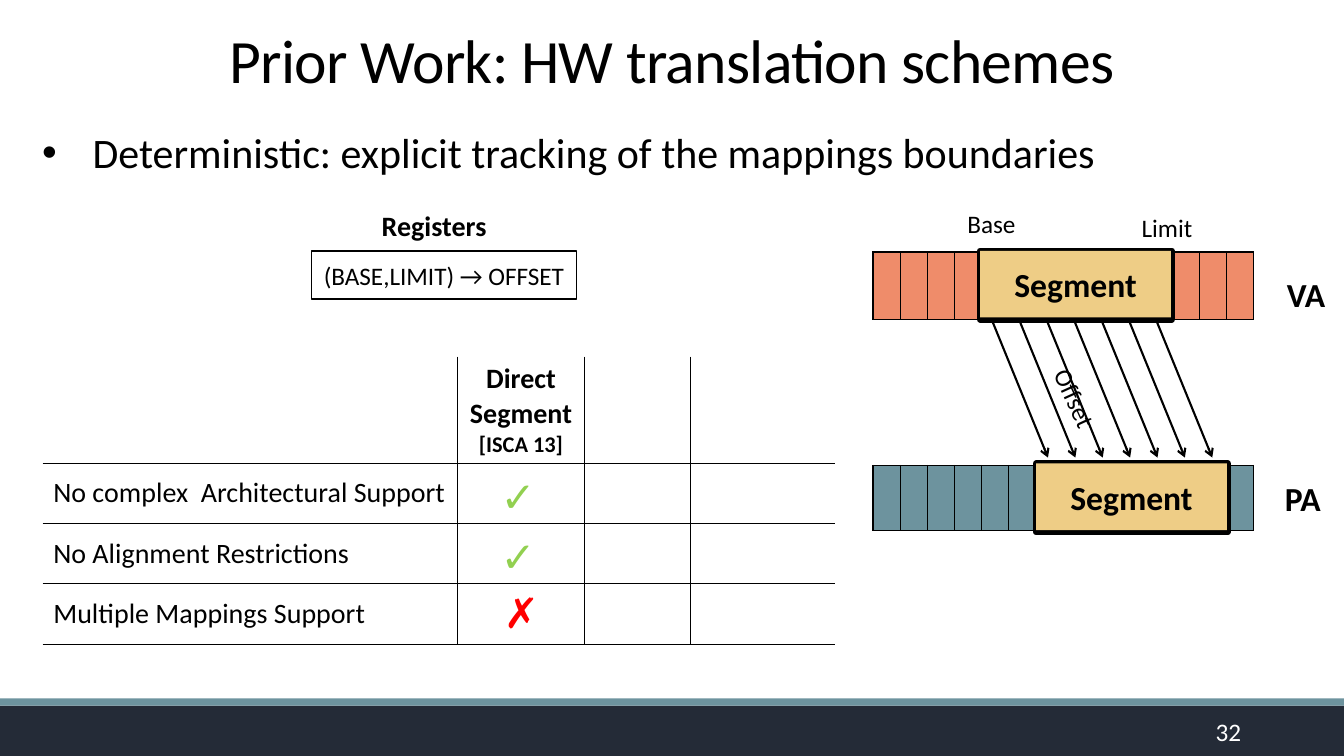
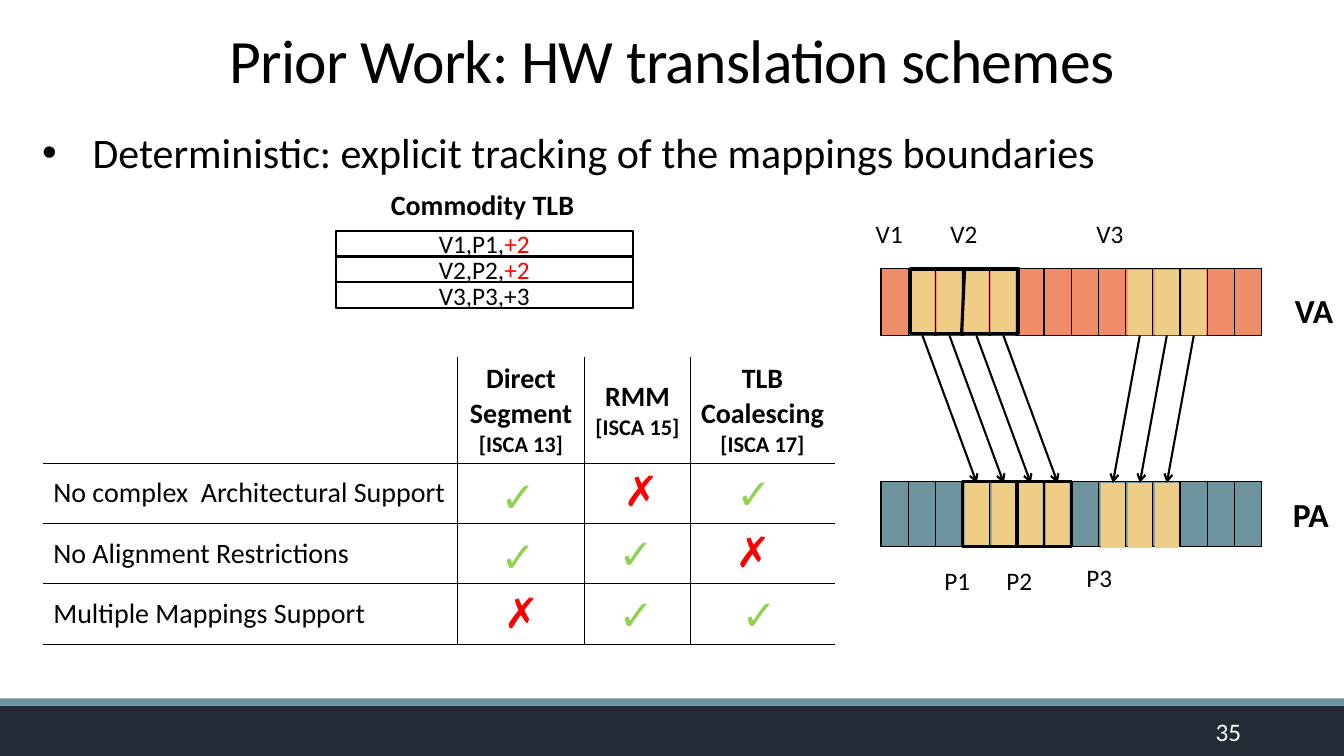
import pptx
import pptx.util
import pptx.dml.color
import pptx.enum.shapes
import pptx.enum.text
import pptx.oxml
import pptx.oxml.ns

Cm, Pt = pptx.util.Cm, pptx.util.Pt
RGB = pptx.dml.color.RGBColor.from_string
ALIGN = pptx.enum.text.PP_ALIGN
ANCHOR = pptx.enum.text.MSO_ANCHOR
AUTO_SIZE = pptx.enum.text.MSO_AUTO_SIZE
RECT = pptx.enum.shapes.MSO_SHAPE.RECTANGLE
NS = pptx.oxml.ns.nsdecls("a")

COLORS = {
    "navy": "242B37", "teal": "6D939E", "coral": "EF8C6A", "sand": "EECD86",
    "black": "000000", "white": "FFFFFF", "green": "92D050", "red": "FF0000",
}
MARK_COLORS = {"✓": "green", "✗": "red"}


def write(p, runs, align=ALIGN.LEFT, color="black", **font):
    """Fill a paragraph from a string or a list of (text, colour) runs."""
    p.alignment = align
    for text, run_color in [(runs, color)] if isinstance(runs, str) else runs:
        r = p.add_run()
        r.text = text
        for key, value in {"name": "Calibri", "size": Pt(18), **font}.items():
            setattr(r.font, key, value)
        r.font.color.rgb = RGB(COLORS[run_color])


def box(s, at, runs="", fill=None, line=None, **text):
    """Add a rectangle if it has a fill or a line width, else a text box."""
    at = [Cm(v) for v in at]
    if fill or line:
        sp = s.shapes.add_shape(RECT, *at)
        sp.shadow.inherit = False
        for part, color in ((sp.fill, fill), (sp.line.fill, line and "black")):
            if color:
                part.solid()
                part.fore_color.rgb = RGB(COLORS[color])
            else:
                part.background()
        if line:
            sp.line.width = Pt(line)
        text = {"align": ALIGN.CENTER, **text}
    else:
        sp = s.shapes.add_textbox(*at)
        sp.text_frame.auto_size = AUTO_SIZE.SHAPE_TO_FIT_TEXT
    sp.text_frame.word_wrap = False
    sp.text_frame.vertical_anchor = ANCHOR.MIDDLE
    if runs:
        write(sp.text_frame.paragraphs[0], runs, **text)
    return sp


prs = pptx.Presentation()
prs.slide_width, prs.slide_height = Cm(33.87), Cm(19.05)

# Title and body places, shared through the layout
layout = prs.slide_layouts[1]
places = [(0, 0.03, 33.87, 2.51), (0.81, 3.07, 32.82, 1.55)]
for ph, place in zip(layout.placeholders, places):
    ph.left, ph.top, ph.width, ph.height = [Cm(v) for v in place]

slides = [prs.slides.add_slide(layout) for _ in range(2)]
s1, s2 = slides

# Bottom bands, moved to the master
bands = [((0, 17.78, 33.87, 1.27), "navy"), ((0, 17.6, 33.87, 0.18), "teal")]
for i, (at, color) in enumerate(bands):
    band = box(s1, at, fill=color).element
    band.nvSpPr.cNvPr.set("id", str(20 + i))
    prs.slide_master.shapes.element.insert(2 + i, band)

# What differs between the slides: number, offset of the diagram, sand cells,
# table heads and marks
headers = [["Direct", "Segment", "[ISCA 13]"], ["RMM", "[ISCA 15]"],
           ["TLB Coalescing", "[ISCA 17]"]]
row_names = ["No complex  Architectural Support", "No Alignment Restrictions",
             "Multiple Mappings Support"]
direct_marks = [("✓", 12.37, 11.71), ("✓", 12.37, 13.23), ("✗", 12.45, 14.63)]
other_marks = [("✗", 15.47, 11.56), ("✓", 15.34, 13.16), ("✓", 15.34, 14.68),
               ("✓", 18.31, 11.63), ("✗", 18.29, 13.11), ("✓", 18.44, 14.68)]
variants = [
    (s1, "32", 0, 0, range(4, 11), range(6, 13), headers[:1], direct_marks),
    (s2, "35", 0.2, 0.41, (), (), headers, direct_marks + other_marks),
]

for s, number, dx, dy, va_sand, pa_sand, heads, marks in variants:
    # Title
    tf = s.shapes.title.text_frame
    tf.vertical_anchor = ANCHOR.BOTTOM
    p = tf.paragraphs[0]
    p.line_spacing = 0.85
    write(p, "Prior Work: HW translation schemes", ALIGN.CENTER, size=Pt(44))
    p.runs[0].font._element.set("spc", "-50")

    # Bullet
    tf = s.placeholders[1].text_frame
    tf.auto_size = AUTO_SIZE.NONE
    p = tf.paragraphs[0]
    p.space_before = Pt(0)
    write(p, "Deterministic: explicit tracking of the mappings boundaries",
          size=Pt(30))
    pPr = p._p.get_or_add_pPr()
    pPr.set("marL", str(Cm(1.27)))
    pPr.set("indent", str(-Cm(1.27)))

    # Page number, in a box of fixed width
    tf = box(s, (27.9, 17.93, 3.63, 1.02), number, align=ALIGN.RIGHT,
             color="white").text_frame
    tf.auto_size, tf.word_wrap = AUTO_SIZE.NONE, True

    # Address strips and comparison table
    strip = [9.6 / 14] * 14
    va = ["sand" if c in va_sand else "coral" for c in range(14)]
    pa = ["sand" if c in pa_sand else "teal" for c in range(14)]
    tables = [
        (22 + dx, 6.35 + dy, strip, [1.7], va),
        (22 + dx, 11.73 + dy, strip, [1.63], pa),
        (1.09, 9, [10.44, 3.2, 2.67, 3.63], [2.62] + [1.52] * 3, None),
    ]
    for x, y, cols, rows, fills in tables:
        tbl = s.shapes.add_table(len(rows), len(cols), Cm(x), Cm(y),
                                 Cm(sum(cols)), Cm(sum(rows))).table
        tbl.first_row = tbl.horz_banding = False
        for col, width in zip(tbl.columns, cols):
            col.width = Cm(width)
        for row, height in zip(tbl.rows, rows):
            row.height = Cm(height)
        for i, cell in enumerate(tbl.iter_cells()):
            r, c = divmod(i, len(cols))
            edges = {"L": c > 0, "R": c < len(cols) - 1, "T": r > 0, "B": True}
            tcPr = cell._tc.get_or_add_tcPr()
            for side, inner in edges.items():
                if fills or inner:
                    tcPr.append(pptx.oxml.parse_xml(
                        f'<a:ln{side} {NS} w="12700"><a:solidFill><a:srgbClr '
                        f'val="{COLORS["black"]}"/></a:solidFill></a:ln{side}>'))
            cell.vertical_anchor = ANCHOR.MIDDLE
            if fills:
                cell.fill.solid()
                cell.fill.fore_color.rgb = RGB(COLORS[fills[c]])
            else:
                cell.fill.background()

    # Texts of the comparison table, the last one built
    for c, lines in enumerate(heads, 1):
        tf = tbl.cell(0, c).text_frame
        for i, text in enumerate(lines):
            p = tf.add_paragraph() if i else tf.paragraphs[0]
            size = Pt(16 if text.startswith("[") else 20)
            write(p, text, ALIGN.CENTER, size=size, bold=True)
    for r, text in enumerate(row_names, 1):
        write(tbl.cell(r, 0).text_frame.paragraphs[0], text, size=Pt(20))
    for mark, x, y in marks:
        box(s, (x, y, 1.35, 1.55), mark, color=MARK_COLORS[mark], size=Pt(30))

    # Names of the strips
    for text, x, y in (("VA", 32.18, 6.77), ("PA", 32.13, 11.91)):
        box(s, (x + dx, y + dy, 1.52, 1.27), text, size=Pt(24), bold=True)

# Slide 1: register and segments
box(s1, (9.37, 5.13, 3.18, 1.12), "Registers", size=Pt(20), bold=True)
box(s1, (7.85, 6.32, 6.68, 1.22), "(BASE,LIMIT) → OFFSET", fill="white", line=1.25)
for x, y in ((24.7, 6.32), (26.11, 11.68)):
    box(s1, (x, y, 4.83, 1.73), line=4.5)
    box(s1, (x, y, 4.81, 1.68), "Segment", fill="sand", size=Pt(24), bold=True)
box(s1, (24.13, 5.13, 1.73, 1.02), "Base")
box(s1, (28.52, 5.21, 1.8, 1.02), "Limit")
box(s1, (26.06, 9.53, 2.08, 1.02), "Offset").rotation = 65.5

# Slide 2: TLB entries
box(s2, (9.6, 4.6, 5.18, 1.12), "Commodity TLB", size=Pt(20), bold=True)
entries = [[("V1,P1,", "black"), ("+2", "red")],
           [("V2,P2,", "black"), ("+2", "red")], "V3,P3,+3"]
for i, entry in enumerate(entries):
    box(s2, (8.46, 5.82 + 0.65 * i, 7.49, 0.64), entry, fill="white", line=1.25)

# Slide 2: mapped pages, frames and labels
va_pages, pa_pages = [
    [box(s2, (x + 0.68 * i, y, 0.61, 1.64), fill="sand")
     for x, count in groups for i in range(count)]
    for y, groups in ((6.81, ((22.94, 4), (28.42, 3))),
                      (12.17, ((24.31, 4), (27.74, 3))))]
for x, y in ((22.94, 6.78), (24.26, 12.14)):
    box(s2, (x, y, 2.74, 1.63), line=2.25)
labels = [("V1", 21.82, 5.38), ("V2", 23.7, 5.38), ("V3", 27.38, 5.38),
          ("P1", 23.55, 14.12), ("P3", 27.13, 14.05)]
for text, x, y in labels:
    box(s2, (x, y, 1.22, 1.02), text)
box(s2, (25.1, 14.12, 1.17, 1.02), "P2", fill="white")

# Connectors: slide, ends, line width, arrowhead
links = [(s1, (24.99 + 0.69 * i, 8.05, 26.41 + 0.69 * i, 11.53), 1.5, True)
         for i in range(7)]
links += [(s2, pair, 1.5, True) for pair in zip(va_pages, pa_pages)]
links += [(s2, (24.31, 6.78, 24.23, 8.46), 2.25, False),
          (s2, (25.63, 12.14, 25.63, 13.77), 2.25, False)]
for s, ends, width, arrow in links:
    joined = len(ends) == 2
    at = (0, 0, 0, 0) if joined else ends
    cx = s.shapes.add_connector(pptx.enum.shapes.MSO_CONNECTOR.STRAIGHT,
                                *[Cm(v) for v in at])
    if joined:
        cx.begin_connect(ends[0], 2)
        cx.end_connect(ends[1], 0)
    cx.line.color.rgb = RGB(COLORS["black"])
    cx.line.width = Pt(width)
    spPr = cx.element.spPr
    if arrow:
        spPr.find(pptx.oxml.ns.qn("a:ln")).append(
            pptx.oxml.parse_xml(f'<a:tailEnd {NS} type="arrow"/>'))
    spPr.append(pptx.oxml.parse_xml(f"<a:effectLst {NS}/>"))

prs.save("out.pptx")
